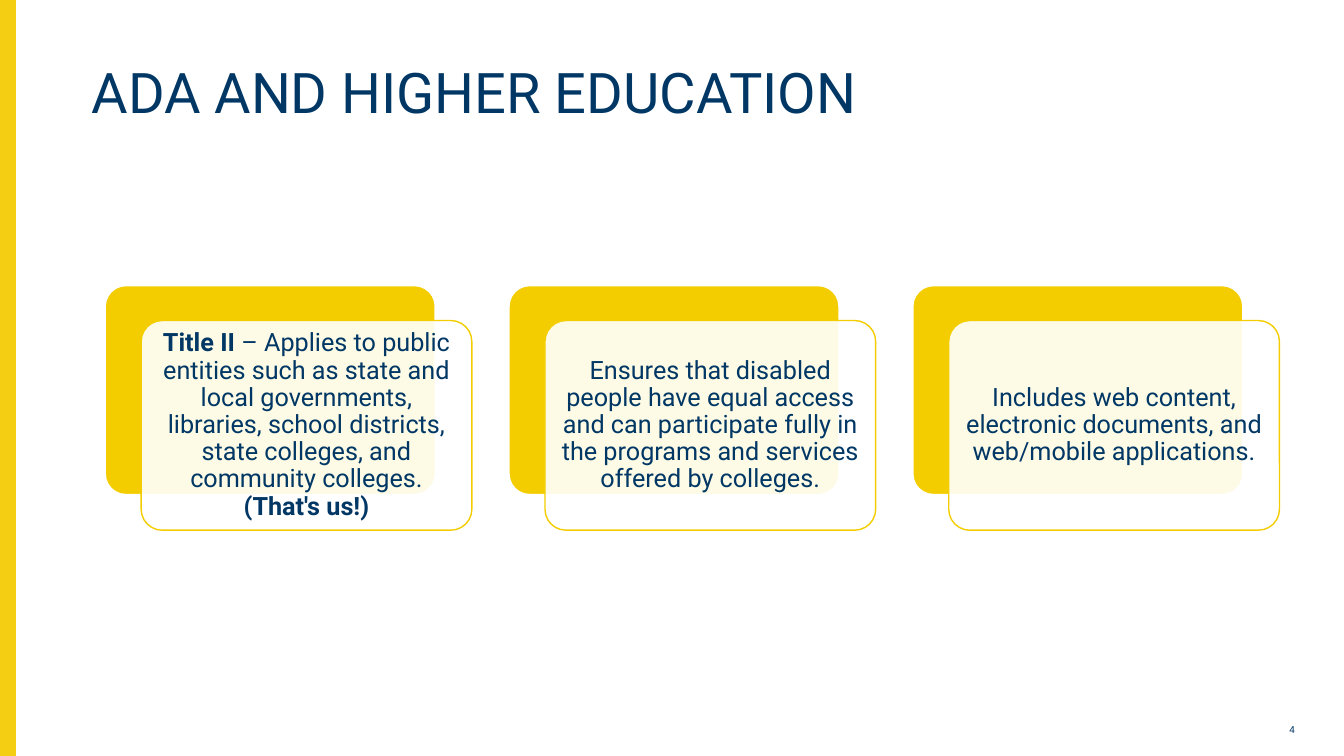
from lxml import etree
from pptx import Presentation
from pptx.dml.color import RGBColor
from pptx.enum.shapes import MSO_SHAPE
from pptx.enum.text import MSO_ANCHOR, PP_ALIGN
from pptx.oxml.ns import qn
from pptx.util import Inches, Pt

RECT, ROUND = MSO_SHAPE.RECTANGLE, MSO_SHAPE.ROUNDED_RECTANGLE
TOP, MIDDLE = MSO_ANCHOR.TOP, MSO_ANCHOR.MIDDLE
LEFT, CENTER, RIGHT = PP_ALIGN.LEFT, PP_ALIGN.CENTER, PP_ALIGN.RIGHT

# Content: each card is a list of (text, bold) runs
TITLE = "ADA AND HIGHER EDUCATION"
PAGE = "4"
CARDS = [
    [("Title II ", True),
     ("– Applies to public entities such as state and local governments, "
      "libraries, school districts, state colleges, and community colleges. ", False),
     ("(That's us!)", True)],
    [("Ensures that disabled people have equal access and can participate "
      "fully in the programs and services offered by colleges.", False)],
    [("Includes web content, electronic documents, and web/mobile "
      "applications.", False)],
]

# Style and card layout, in inches
FONT, NAVY, GOLD, EDGE, WHITE = "Roboto", "003764", "F4CD00", "F4CE12", "FFFFFF"
CARD_X, CARD_Y, CARD_W, CARD_H = 1.04, 2.83, 3.28, 2.08
STEP, SHIFT_X, SHIFT_Y = 4.005, 0.36, 0.35


def color(code):
    return RGBColor.from_string(code)


def add_box(kind, x, y, w, h, fill, line, width):
    box = slide.shapes.add_shape(kind, Inches(x), Inches(y), Inches(w), Inches(h))
    box.shadow.inherit = False
    box.fill.solid()
    box.fill.fore_color.rgb = color(fill)
    box.line.color.rgb = color(line)
    box.line.width = Pt(width)
    if kind == ROUND:
        box.adjustments[0] = 0.1
    return box


def set_text(shape, runs, size, align, anchor):
    frame = shape.text_frame
    frame.word_wrap = True
    frame.vertical_anchor = anchor
    para = frame.paragraphs[0]
    para.alignment = align
    para.line_spacing = 0.9
    para.font.name = FONT
    para.font.size = Pt(size)
    para.font.color.rgb = color(NAVY)
    for text, bold in runs:
        run = para.add_run()
        run.text = text
        run.font.bold = bold
    return frame


def add_label(x, y, w, h, text, size, align, anchor):
    label = slide.shapes.add_textbox(Inches(x), Inches(y), Inches(w), Inches(h))
    set_text(label, [(text, False)], size, align, anchor)


deck = Presentation()
deck.slide_width, deck.slide_height = Inches(13.33), Inches(7.5)
slide = deck.slides.add_slide(deck.slide_layouts[6])

# Side bar, title and page number
add_box(RECT, 0, 0, 0.15, 7.5, EDGE, EDGE, 1)
add_label(0.81, 0.6, 12.11, 0.86, TITLE, 40, LEFT, TOP)
add_label(12.27, 7.14, 0.67, 0.21, PAGE, 7, RIGHT, MIDDLE)

# Cards: gold back plate and translucent white front
for i, runs in enumerate(CARDS):
    x = CARD_X + i * STEP
    add_box(ROUND, x, CARD_Y, CARD_W, CARD_H, GOLD, WHITE, 1.5)
    front = add_box(ROUND, x + SHIFT_X, CARD_Y + SHIFT_Y, CARD_W, CARD_H,
                    WHITE, GOLD, 1)
    tone = front.fill._xPr.find(qn("a:solidFill"))[0]
    etree.SubElement(tone, qn("a:alpha")).set("val", "90000")
    frame = set_text(front, runs, 18, CENTER, MIDDLE)
    frame.margin_left = frame.margin_right = Inches(0.07)
    frame.margin_top = frame.margin_bottom = Inches(0.07)

deck.save("out.pptx")
